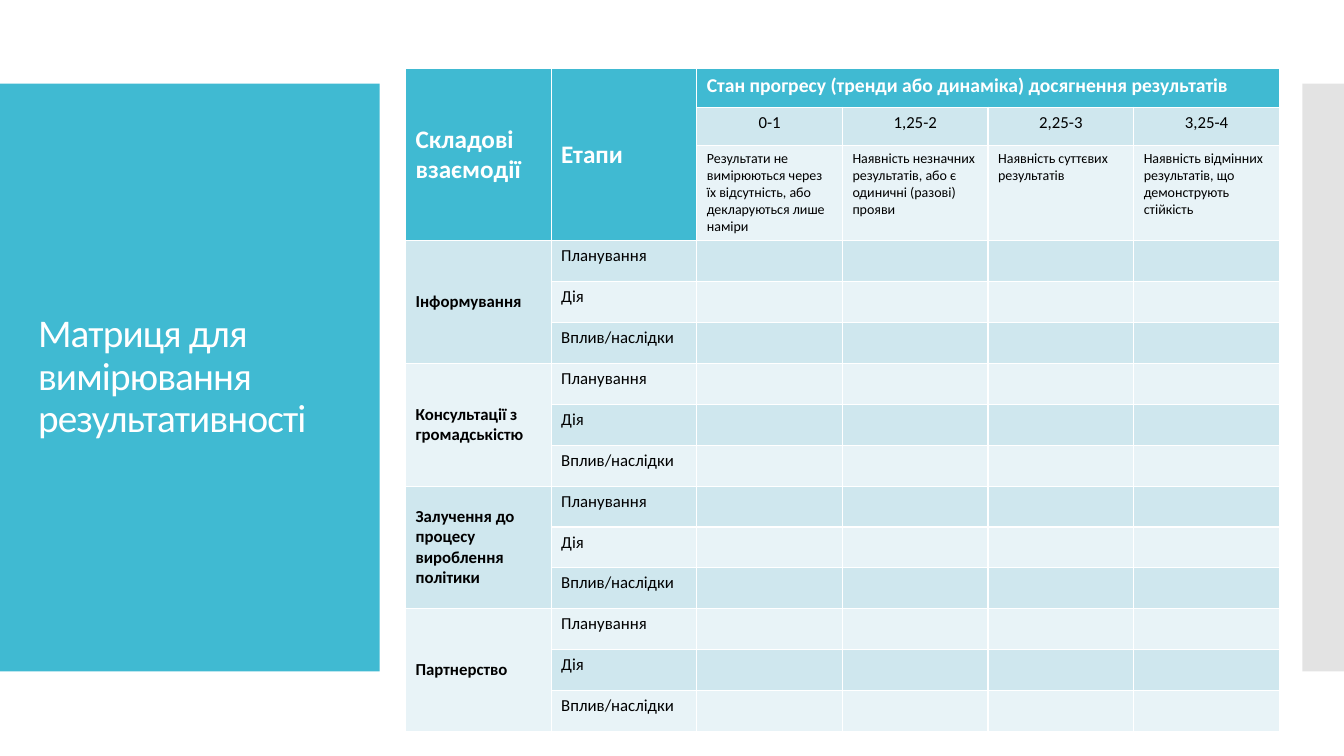
import pptx
import pptx.dml.color
import pptx.enum.shapes
import pptx.enum.text
import pptx.oxml.ns
import pptx.util
from lxml import etree
from pptx.util import Cm

FONT = "Calibri"
TEAL, WHITE, BLACK, GREY = "40BAD2", "FFFFFF", "000000", "C8C8C8"
BANDS = ["CFE7EE", "E8F3F7"]

HEADINGS = ["Складові взаємодії", "Етапи"]
PROGRESS_HEADING = "Стан прогресу (тренди або динаміка) досягнення результатів"
LEVELS = [
    ("0-1", "Результати не вимірюються через їх відсутність, або декларуються лише наміри"),
    ("1,25-2", "Наявність незначних результатів, або є одиничні (разові) прояви"),
    ("2,25-3", "Наявність суттєвих результатів"),
    ("3,25-4", "Наявність відмінних результатів, що демонструють стійкість"),
]
COMPONENTS = [
    "Інформування",
    "Консультації з громадськістю",
    "Залучення до процесу вироблення політики",
    "Партнерство",
]
STAGES = ["Планування", "Дія", "Вплив/наслідки"]
HEADER_ROWS = 3
FIRST_LEVEL_COLUMN = len(HEADINGS)


def color(hex_string):
    return pptx.dml.color.RGBColor.from_string(hex_string)


def write_text(frame, text, size=12, font_color=BLACK, bold=False,
               align=pptx.enum.text.PP_ALIGN.LEFT, line_spacing=None, tracking=None):
    paragraph = frame.paragraphs[0]
    paragraph.alignment = align
    paragraph.line_spacing = line_spacing
    run = paragraph.add_run()
    run.text = text
    run.font.name = FONT
    run.font.size = pptx.util.Pt(size)
    run.font.bold = bold
    run.font.color.rgb = color(font_color)
    if tracking is not None:
        run.font._element.set("spc", str(round(tracking * 100)))


def add_panel(slide, left, top, width, height, fill, opacity=None):
    shape = slide.shapes.add_shape(
        pptx.enum.shapes.MSO_SHAPE.RECTANGLE, left, top, width, height)
    shape.shadow.inherit = False
    shape.line.fill.background()
    shape.fill.solid()
    shape.fill.fore_color.rgb = color(fill)
    if opacity is not None:
        fill_color = shape._element.spPr.find(".//" + pptx.oxml.ns.qn("a:srgbClr"))
        alpha = etree.SubElement(fill_color, pptx.oxml.ns.qn("a:alpha"))
        alpha.set("val", str(opacity * 1000))


def add_title(slide, text):
    shape = slide.shapes.add_textbox(Cm(0.71), Cm(3.12), Cm(8.18), Cm(12.78))
    frame = shape.text_frame
    frame.word_wrap = True
    frame.vertical_anchor = pptx.enum.text.MSO_ANCHOR.MIDDLE
    write_text(frame, text, size=28, font_color=WHITE, line_spacing=0.9, tracking=-0.6)


def fill_cell(cell, fill):
    cell.fill.solid()
    cell.fill.fore_color.rgb = color(fill)


def merge_down(table, row, column, count):
    cell = table.cell(row, column)
    cell.merge(table.cell(row + count - 1, column))
    cell.vertical_anchor = pptx.enum.text.MSO_ANCHOR.MIDDLE
    return cell


def add_matrix(slide):
    row_count = HEADER_ROWS + len(COMPONENTS) * len(STAGES)
    column_count = FIRST_LEVEL_COLUMN + len(LEVELS)
    frame = slide.shapes.add_table(
        row_count, column_count, Cm(10.22), Cm(1.73), Cm(22.04), Cm(16.7))
    table = frame.table
    for column in table.columns:
        column.width = Cm(3.67)
    for index, row in enumerate(table.rows):
        row.height = Cm(0.97) if index < 2 else Cm(1.03)
    table.rows[2].height = Cm(2.4)

    # Alternating bands below a solid heading
    for row in range(row_count):
        for column in range(column_count):
            is_heading = row == 0 or (row < HEADER_ROWS and column < FIRST_LEVEL_COLUMN)
            fill_cell(table.cell(row, column), TEAL if is_heading else BANDS[(row - 1) % 2])

    # Headings
    for column, heading in enumerate(HEADINGS):
        cell = merge_down(table, 0, column, HEADER_ROWS)
        write_text(cell.text_frame, heading, size=18, font_color=WHITE, bold=True)
    progress = table.cell(0, FIRST_LEVEL_COLUMN)
    progress.merge(table.cell(0, column_count - 1))
    write_text(progress.text_frame, PROGRESS_HEADING, size=14, font_color=WHITE, bold=True)

    # Progress levels
    for column, (score, meaning) in enumerate(LEVELS, FIRST_LEVEL_COLUMN):
        write_text(table.cell(1, column).text_frame, score,
                   align=pptx.enum.text.PP_ALIGN.CENTER)
        write_text(table.cell(2, column).text_frame, meaning, size=10)

    # Components with their stages
    for index, component in enumerate(COMPONENTS):
        first_row = HEADER_ROWS + index * len(STAGES)
        cell = merge_down(table, first_row, 0, len(STAGES))
        write_text(cell.text_frame, component, bold=True)
        for row, stage in enumerate(STAGES, first_row):
            write_text(table.cell(row, 1).text_frame, stage)


def main():
    presentation = pptx.Presentation()
    presentation.slide_width = Cm(33.87)
    presentation.slide_height = Cm(19.05)
    slide = presentation.slides.add_slide(presentation.slide_layouts[6])

    # Side panels
    add_panel(slide, Cm(0), Cm(2.11), Cm(9.57), Cm(14.81), TEAL)
    add_panel(slide, Cm(32.82), Cm(2.11), Cm(1.05), Cm(14.81), GREY, opacity=50)

    add_title(slide, "Матриця для вимірювання результативності")
    add_matrix(slide)
    presentation.save("out.pptx")


if __name__ == "__main__":
    main()
